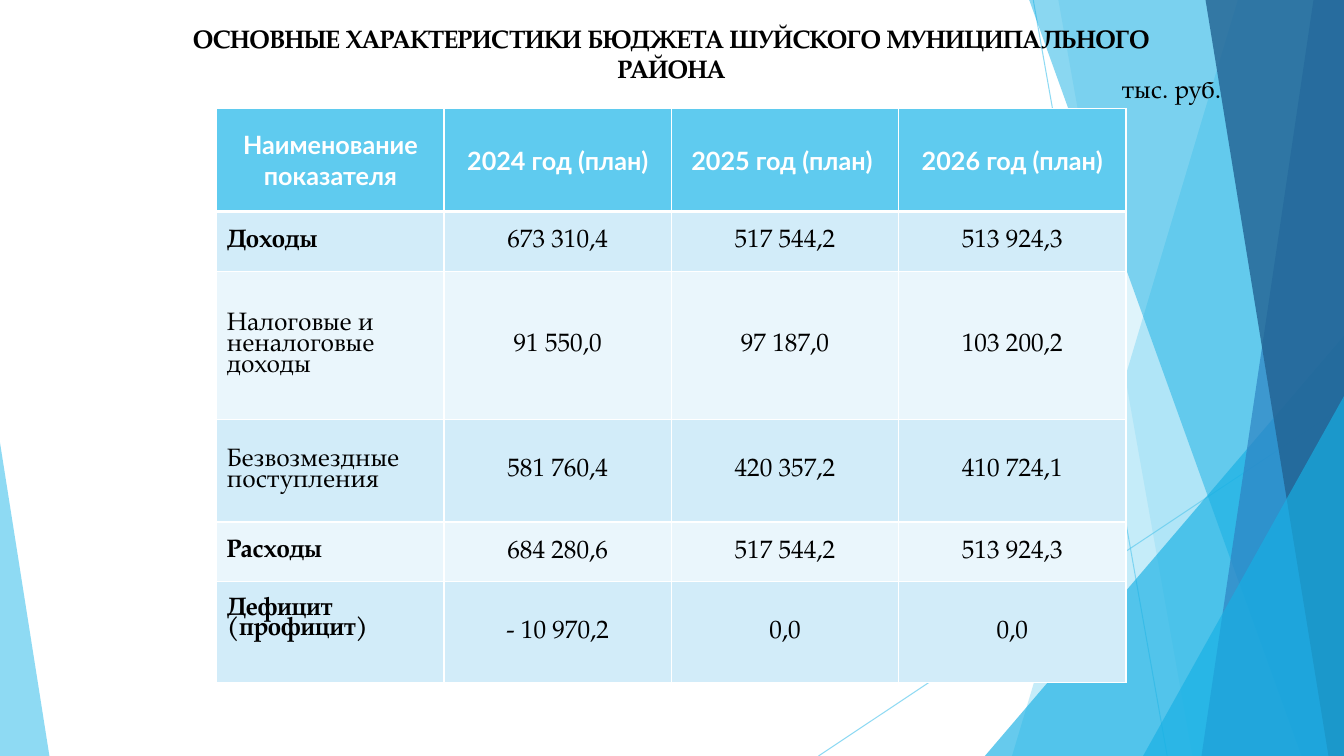
"""Build the slide with the main budget figures of the Shuya district."""
import pptx
import pptx.util
import pptx.dml.color
import pptx.enum.shapes
import pptx.enum.text
import pptx.oxml
import pptx.oxml.ns
import lxml.etree

RGB = pptx.dml.color.RGBColor
SKY = RGB(0x5F, 0xCB, 0xEF)
CYAN = RGB(0x17, 0xB0, 0xE4)
BLUE = RGB(0x2E, 0x83, 0xC3)
NAVY = RGB(0x22, 0x62, 0x92)
BAND = RGB(0xD2, 0xEC, 0xF9)
PALE = RGB(0xEA, 0xF6, 0xFC)
WHITE = RGB(0xFF, 0xFF, 0xFF)
BLACK = RGB(0, 0, 0)
SERIF = "TeX Gyre Pagella"
CENTER = pptx.enum.text.PP_ALIGN.CENTER
LEFT = pptx.enum.text.PP_ALIGN.LEFT
qn = pptx.oxml.ns.qn

prs = pptx.Presentation()
prs.slide_width = pptx.util.Inches(13.333)
prs.slide_height = pptx.util.Inches(7.5)
s = prs.slides.add_slide(prs.slide_layouts[6])
W, H = prs.slide_width / 100, prs.slide_height / 100


def set_alpha(element, percent):
    """Make the solid colour inside the element translucent."""
    color = next(element.iter(qn("a:srgbClr")))
    lxml.etree.SubElement(color, qn("a:alpha")).set("val", str(percent * 1000))


def style_text(p, font, color, bold, align):
    """Format a paragraph and its runs."""
    p.alignment = align
    for r in p.runs:
        r.font.size = pptx.util.Pt(18)
        r.font.name = font
        r.font.bold = bold
        r.font.color.rgb = color


for x1, y1, x2, y2 in [(76.88, 0, 86.85, 100), (100, 53.73, 60.9, 100)]:
    line = s.shapes.add_connector(pptx.enum.shapes.MSO_CONNECTOR.STRAIGHT,
                                  int(x1 * W), int(y1 * H), int(x2 * W), int(y2 * H))
    line.line.color.rgb = SKY
    line.line.width = pptx.util.Pt(0.75)
    set_alpha(line.line.fill._xPr, 70)
    lxml.etree.SubElement(line._element.spPr, qn("a:effectLst"))

facets = [
    ("band", (92.1, 75.3), SKY, 36),
    ("band", (78.75, 88.73), SKY, 20),
    ("triangle", (73.28, 44.4, 26.72, 1), CYAN, 66),
    ("band", (76.58, 96.83), CYAN, 50),
    ("band", (97.73, 89.4), BLUE, 70),
    ("band", (89.7, 98.85), NAVY, 80),
    ("triangle", (85.05, 52.4, 14.95, 1), CYAN, 66),
    ("triangle", (0, 58.53, 3.68, 0), SKY, 70),
]
for kind, place, color, alpha in facets:
    if kind == "band":
        top, bottom = place
        builder = s.shapes.build_freeform(int(top * W), 0)
        builder.add_line_segments([(int(x * W), int(y * H)) for x, y in
                                   [(100, 0), (100, 100), (bottom, 100)]])
        sp = builder.convert_to_shape()
    else:
        x, y, width, apex = place
        sp = s.shapes.add_shape(pptx.enum.shapes.MSO_SHAPE.ISOSCELES_TRIANGLE,
                                int(x * W), int(y * H), int(width * W), int((100 - y) * H))
        sp.adjustments[0] = apex
    sp.shadow.inherit = False
    sp.fill.solid()
    sp.fill.fore_color.rgb = color
    set_alpha(sp._element.spPr, alpha)
    sp.line.fill.background()

rows = [
    ("Наименование показателя", "2024 год (план)", "2025 год (план) ", "2026 год (план)"),
    ("Доходы", "673 310,4", "517 544,2", "513 924,3"),
    ("Налоговые и неналоговые доходы", "91 550,0", "97 187,0", "103 200,2"),
    ("Безвозмездные поступления", "581 760,4", "420 357,2", "410 724,1"),
    ("Расходы", "684 280,6", "517 544,2", "513 924,3"),
    ("Дефицит (профицит)", "- 10 970,2", "0,0", "0,0"),
]
heights = [13.6, 7.87, 19.6, 13.6, 7.87, 13.4]
totals = ("Доходы", "Расходы", "Дефицит (профицит)")
table = s.shapes.add_table(len(rows), 4, int(16.13 * W), int(14.4 * H),
                           int(67.65 * W), int(sum(heights) * H)).table
for column in table.columns:
    column.width = int(67.65 * W / 4)
for i, (values, height) in enumerate(zip(rows, heights)):
    table.rows[i].height = int(height * H)
    for j, value in enumerate(values):
        cell = table.cell(i, j)
        cell.text = value
        cell.vertical_anchor = pptx.enum.text.MSO_ANCHOR.MIDDLE
        p = cell.text_frame.paragraphs[0]
        if i == 0:
            style_text(p, "Lato", WHITE, True, CENTER)
        else:
            style_text(p, SERIF, BLACK, value in totals, CENTER if j else LEFT)
            p.line_spacing = 0.83
        for side in ("L", "R", "T", "B"):
            thick = (i, side) in ((0, "B"), (1, "T"))
            border = lxml.etree.SubElement(cell._tc.get_or_add_tcPr(), qn("a:ln" + side))
            border.set("w", str(pptx.util.Pt(3 if thick else 1)))
            fill = lxml.etree.SubElement(border, qn("a:solidFill"))
            lxml.etree.SubElement(fill, qn("a:srgbClr")).set("val", str(WHITE))
        cell.fill.solid()
        cell.fill.fore_color.rgb = SKY if i == 0 else BAND if i % 2 else PALE
table.cell(len(rows) - 1, 0).margin_bottom = int(4 * H)

captions = [
    ("ОСНОВНЫЕ ХАРАКТЕРИСТИКИ БЮДЖЕТА ШУЙСКОГО МУНИЦИПАЛЬНОГО РАЙОНА",
     (10.8, 2.4, 78.3, 9.47), True, CENTER),
    ("тыс. руб.", (82.73, 9.07, 11.63, 5.33), False, LEFT),
]
for text, (x, y, width, height), bold, align in captions:
    tf = s.shapes.add_textbox(int(x * W), int(y * H), int(width * W), int(height * H)).text_frame
    tf.word_wrap = True
    tf.text = text
    style_text(tf.paragraphs[0], SERIF, BLACK, bold, align)

prs.save("out.pptx")
